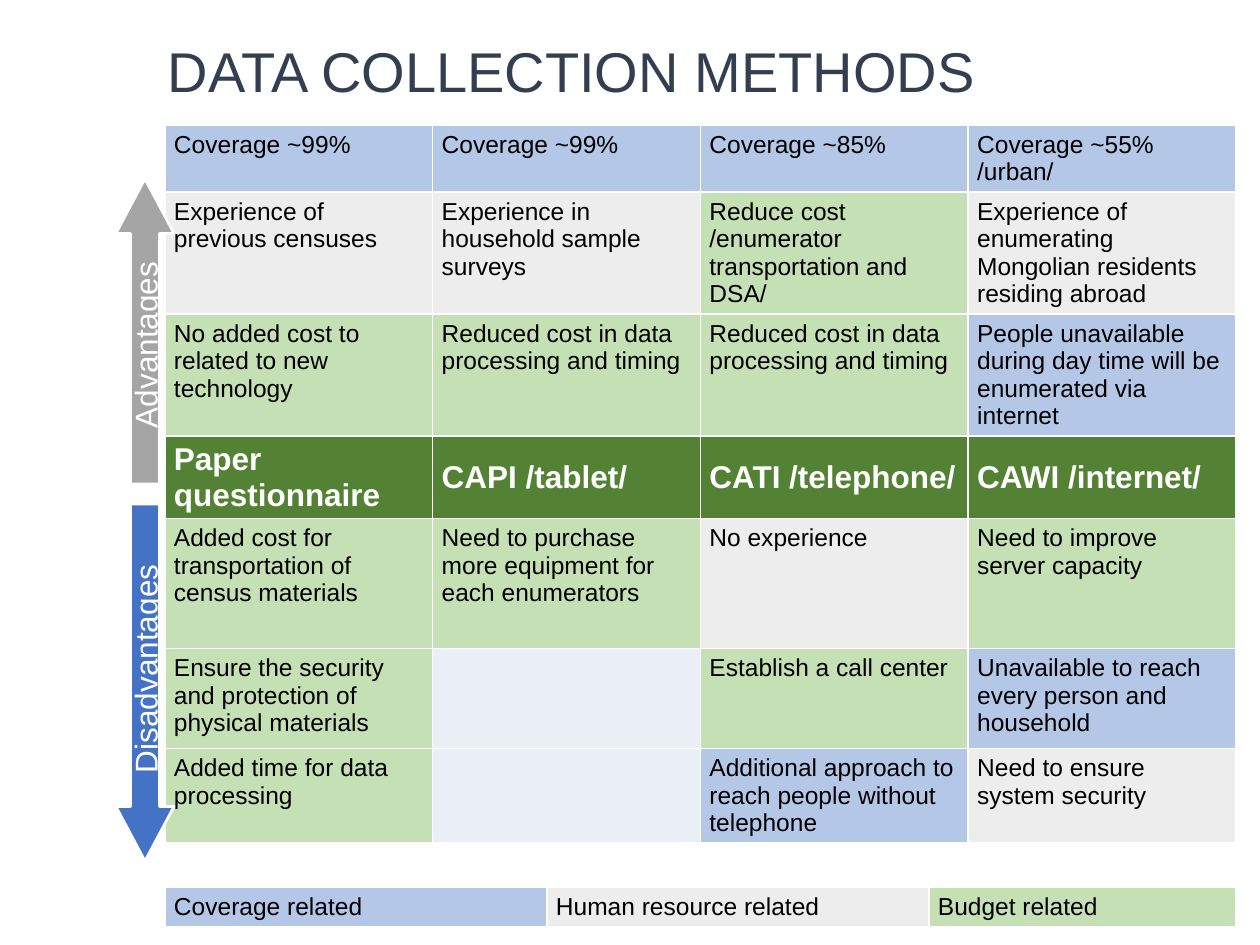
from pptx import Presentation
from pptx.dml.color import RGBColor
from pptx.enum.shapes import MSO_SHAPE
from pptx.enum.text import MSO_ANCHOR, PP_ALIGN
from pptx.oxml import parse_xml
from pptx.oxml.ns import nsdecls
from pptx.util import Pt

# Content: each cell is (kind, text)
FILLS = {"cover": "B4C7E7", "staff": "EDEDED", "cost": "C5E0B4",
         "head": "548235", "none": "EAEFF7"}
TITLE = "DATA COLLECTION METHODS"
ROWS = [
    [("cover", "Coverage ~99%"), ("cover", "Coverage ~99%"),
     ("cover", "Coverage ~85%"), ("cover", "Coverage ~55% /urban/")],
    [("staff", "Experience of previous censuses"),
     ("staff", "Experience in household sample surveys"),
     ("cost", "Reduce cost /enumerator transportation and DSA/"),
     ("staff", "Experience of enumerating Mongolian residents residing abroad")],
    [("cost", "No added cost to related to new technology"),
     ("cost", "Reduced cost in data processing and timing"),
     ("cost", "Reduced cost in data processing and timing"),
     ("cover", "People unavailable during day time will be enumerated via internet")],
    [("head", "Paper questionnaire"), ("head", "CAPI /tablet/"),
     ("head", "CATI /telephone/"), ("head", "CAWI /internet/")],
    [("cost", "Added cost for transportation of census materials"),
     ("cost", "Need to purchase more equipment for each enumerators"),
     ("staff", "No experience"), ("cost", "Need to improve server capacity")],
    [("cost", "Ensure the security and protection of physical materials"),
     ("none", ""), ("cost", "Establish a call center"),
     ("cover", "Unavailable to reach every person and household")],
    [("cost", "Added time for data processing"), ("none", ""),
     ("cover", "Additional approach to reach people without telephone"),
     ("staff", "Need to ensure system security")],
]
HEIGHTS = [43, 100, 100, 67, 130, 100, 71]
LEGEND = [[("cover", "Coverage related"), ("staff", "Human resource related"),
           ("cost", "Budget related")]]
# Arrows: text, top, height, fill, text direction, points down
ARROWS = [("Advantages", 179, 305, "A5A5A5", "vert270", False),
          ("Disadvantages", 504, 357, "4472C4", "vert", True)]
LEFT, WIDE = 165, 1071


def px(n):
    return round(n * 914400 / 126)


def rgb(code):
    return RGBColor.from_string(code)


def style(par, size, color, bold=False):
    for run in par.runs:
        font = run.font
        font.name, font.size, font.bold = "Arial", Pt(size), bold
        font.color.rgb = rgb(color)


def edge(cell):
    props = cell._tc.get_or_add_tcPr()
    for side in "LRTB":
        props.append(parse_xml(
            f'<a:ln{side} {nsdecls("a")} w="12700"><a:solidFill>'
            f'<a:srgbClr val="FFFFFF"/></a:solidFill></a:ln{side}>'))


def add_grid(slide, top, cells, widths, heights):
    table = slide.shapes.add_table(
        len(cells), len(widths), px(LEFT), px(top),
        px(sum(widths)), px(sum(heights))).table
    table.first_row = table.horz_banding = False
    for col, width in zip(table.columns, widths):
        col.width = px(width)
    for row, height, line in zip(table.rows, heights, cells):
        row.height = px(height)
        for cell, (kind, text) in zip(row.cells, line):
            head = kind == "head"
            edge(cell)
            cell.fill.solid()
            cell.fill.fore_color.rgb = rgb(FILLS[kind])
            cell.margin_left = cell.margin_right = px(9)
            cell.margin_top = cell.margin_bottom = px(6)
            if head:
                cell.vertical_anchor = MSO_ANCHOR.MIDDLE
            if text:
                cell.text_frame.text = text
                style(cell.text_frame.paragraphs[0], 18 if head else 14,
                      "FFFFFF" if head else "000000", head)


def add_arrow(slide, text, top, height, fill, turn, down):
    arrow = slide.shapes.add_shape(
        MSO_SHAPE.UP_ARROW, px(116), px(top), px(58), px(height))
    arrow.shadow.inherit = False
    arrow.adjustments[0], arrow.adjustments[1] = 0.5, 0.94
    arrow.fill.solid()
    arrow.fill.fore_color.rgb = rgb(fill)
    arrow.line.color.rgb = rgb("FFFFFF")
    arrow.line.width = Pt(1.5)
    if down:
        arrow._element.spPr.xfrm.set("flipV", "1")
    frame = arrow.text_frame
    frame.text = text
    frame.vertical_anchor = MSO_ANCHOR.MIDDLE
    frame._txBody.bodyPr.set("vert", turn)
    par = frame.paragraphs[0]
    par.alignment = PP_ALIGN.CENTER
    style(par, 18, "FFFFFF")


def main():
    deck = Presentation()
    deck.slide_width, deck.slide_height = px(1260), px(945)
    slide = deck.slides.add_slide(deck.slide_layouts[5])

    # Title
    title = slide.shapes.title
    title.left, title.top, title.width, title.height = map(px, (155, 24, 1042, 101))
    title.text_frame.text = TITLE
    title.text_frame.vertical_anchor = MSO_ANCHOR.MIDDLE
    par = title.text_frame.paragraphs[0]
    par.alignment, par.line_spacing = PP_ALIGN.LEFT, 0.9
    style(par, 32, "333F50")

    # Methods, arrows and colour key
    add_grid(slide, 125, ROWS, [WIDE / 4] * 4, HEIGHTS)
    for arrow in ARROWS:
        add_arrow(slide, *arrow)
    add_grid(slide, 887, LEGEND, [382, 382, WIDE - 2 * 382], [37])

    deck.save("out.pptx")


if __name__ == "__main__":
    main()
